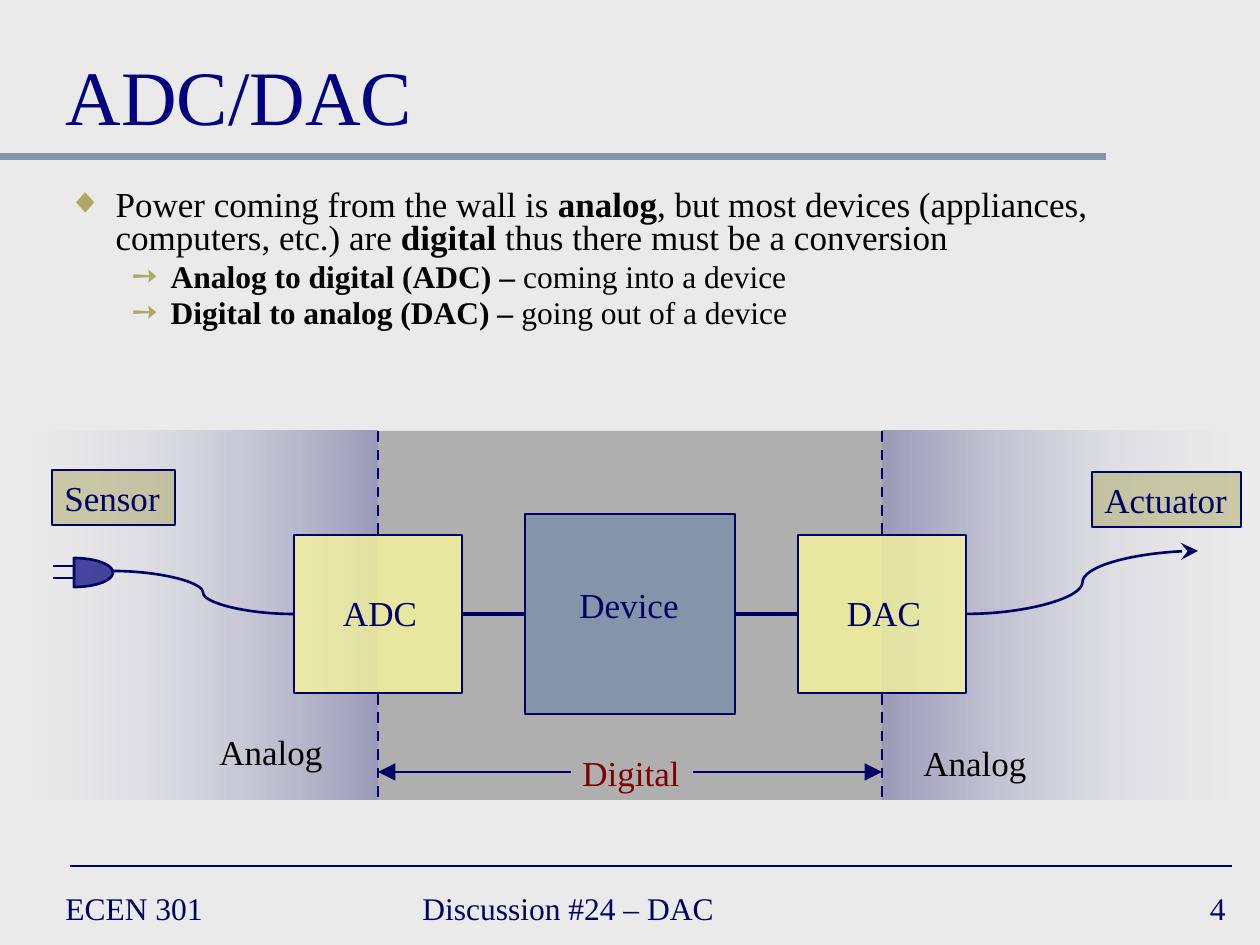
import math
from dataclasses import dataclass
from typing import Optional

from lxml import etree
from pptx import Presentation
from pptx.dml.color import RGBColor
from pptx.enum import dml, shapes, text
from pptx.oxml.ns import qn
from pptx.util import Pt

EMU_PER_PX = 914400 / 126
FONT = "Times New Roman"
BACKGROUND = RGBColor(0xEA, 0xEA, 0xEA)
NAVY = RGBColor(0x00, 0x00, 0x66)
TITLE_BLUE = RGBColor(0x00, 0x00, 0x80)
STEEL = RGBColor(0x84, 0x95, 0xA9)
VIOLET = RGBColor(0x66, 0x66, 0x99)
PALE_VIOLET = RGBColor(0xCB, 0xCB, 0xDD)
GRAY = RGBColor(0x96, 0x96, 0x96)
YELLOW = RGBColor(0xFF, 0xFF, 0x99)
OLIVE = RGBColor(0xAB, 0xA9, 0x64)
BULLET = RGBColor(0xAC, 0xA9, 0x64)
MAROON = RGBColor(0x80, 0x00, 0x00)
BLACK = RGBColor(0x00, 0x00, 0x00)
LEFT, CENTER, RIGHT = text.PP_ALIGN.LEFT, text.PP_ALIGN.CENTER, text.PP_ALIGN.RIGHT
STRAIGHT, CURVE = shapes.MSO_CONNECTOR.STRAIGHT, shapes.MSO_CONNECTOR.CURVE


@dataclass
class Box:
    left: int
    top: int
    width: int
    height: int


@dataclass
class Block:
    box: Box
    color: RGBColor
    opacity: int = 100
    line_width: float = 0
    label: str = ""


@dataclass
class Label:
    box: Box
    words: str
    color: RGBColor = NAVY
    size: int = 20
    align: text.PP_ALIGN = CENTER
    anchor: text.MSO_ANCHOR = text.MSO_ANCHOR.TOP


@dataclass
class Line:
    start: tuple[int, int]
    end: tuple[int, int]
    width: float = 1.5
    color: RGBColor = NAVY
    kind: shapes.MSO_CONNECTOR = STRAIGHT
    dashed: bool = False
    arrow: Optional[str] = None


@dataclass
class Bullet:
    mark: str
    size: int
    margin: int
    hanging: int
    runs: list[tuple[str, bool]]


def px(value: float) -> int:
    return round(value * EMU_PER_PX)


def bounds(box: Box) -> tuple[int, int, int, int]:
    return px(box.left), px(box.top), px(box.width), px(box.height)


def set_opacity(element, color: RGBColor, percent: int) -> None:
    for node in element.iter(qn("a:srgbClr")):
        if node.get("val") == str(color):
            etree.SubElement(node, qn("a:alpha")).set("val", str(percent * 1000))


def style_outline(shape, width: float) -> None:
    shape.shadow.inherit = False
    if width:
        shape.line.color.rgb = NAVY
        shape.line.width = Pt(width)
    else:
        shape.line.fill.background()


def fill_solid(shape, color: RGBColor, opacity: int) -> None:
    shape.fill.solid()
    shape.fill.fore_color.rgb = color
    if opacity < 100:
        set_opacity(shape._element.spPr.find(qn("a:solidFill")), color, opacity)


def style_font(paragraph, size: int, color: RGBColor) -> None:
    paragraph.font.name = FONT
    paragraph.font.size = Pt(size)
    paragraph.font.color.rgb = color


def write_label(shape, label: Label) -> None:
    frame = shape.text_frame
    frame.word_wrap = False
    frame.vertical_anchor = label.anchor
    paragraph = frame.paragraphs[0]
    paragraph.text = label.words
    paragraph.alignment = label.align
    style_font(paragraph, label.size, label.color)


def draw_label(slide, label: Label) -> None:
    write_label(slide.shapes.add_textbox(*bounds(label.box)), label)


def draw_block(slide, block: Block) -> None:
    shape = slide.shapes.add_shape(shapes.MSO_SHAPE.RECTANGLE, *bounds(block.box))
    fill_solid(shape, block.color, block.opacity)
    style_outline(shape, block.line_width)
    if block.label:
        write_label(shape, Label(block.box, block.label, align=LEFT))


def draw_fade(slide, box: Box, stops: list[tuple[RGBColor, int]]) -> None:
    shape = slide.shapes.add_shape(shapes.MSO_SHAPE.RECTANGLE, *bounds(box))
    shape.fill.gradient()
    shape.fill.gradient_angle = 0
    for stop, (color, opacity) in zip(shape.fill.gradient_stops, stops):
        stop.color.rgb = color
        set_opacity(shape._element.spPr, color, opacity)
    style_outline(shape, 0)


def draw_line(slide, line: Line) -> None:
    connector = slide.shapes.add_connector(line.kind, *map(px, line.start + line.end))
    connector.line.color.rgb = line.color
    connector.line.width = Pt(line.width)
    if line.dashed:
        connector.line.dash_style = dml.MSO_LINE.DASH
    properties = connector._element.spPr
    if line.arrow:
        arrowhead = etree.SubElement(properties.find(qn("a:ln")), qn("a:tailEnd"))
        for name, value in (("type", line.arrow), ("w", "lg"), ("len", "lg")):
            arrowhead.set(name, value)
    etree.SubElement(properties, qn("a:effectLst"))


def draw_plug(slide, box: Box) -> None:
    middle = box.top + box.height / 2
    angles = [math.radians(degrees) for degrees in range(-90, 91, 6)]
    points = [(px(box.left + box.width * math.cos(a)), px(middle + box.height / 2 * math.sin(a)))
              for a in angles]
    builder = slide.shapes.build_freeform(*points[0])
    builder.add_line_segments(points[1:], close=True)
    plug = builder.convert_to_shape()
    fill_solid(plug, TITLE_BLUE, 70)
    style_outline(plug, 1.5)


def place(shape, box: Box) -> None:
    shape.left, shape.top, shape.width, shape.height = bounds(box)
    shape.text_frame.auto_size = text.MSO_AUTO_SIZE.NONE


def write_bullet(paragraph, bullet: Bullet) -> None:
    properties = paragraph._p.get_or_add_pPr()
    properties.set("marL", str(px(bullet.margin)))
    properties.set("indent", str(-px(bullet.hanging)))
    color = etree.SubElement(properties, qn("a:buClr"))
    etree.SubElement(color, qn("a:srgbClr")).set("val", str(BULLET))
    etree.SubElement(properties, qn("a:buChar")).set("char", bullet.mark)
    paragraph.line_spacing = 0.8
    paragraph.alignment = LEFT
    style_font(paragraph, bullet.size, BLACK)
    for words, bold in bullet.runs:
        run = paragraph.add_run()
        run.text = words
        run.font.bold = bold


def main() -> None:
    presentation = Presentation()
    presentation.slide_width, presentation.slide_height = px(1260), px(945)
    slide = presentation.slides.add_slide(presentation.slide_layouts[1])
    slide.background.fill.solid()
    slide.background.fill.fore_color.rgb = BACKGROUND

    title, body = slide.placeholders
    place(title, Box(53, 21, 1155, 126))
    title.text_frame.vertical_anchor = text.MSO_ANCHOR.BOTTOM
    heading = title.text_frame.paragraphs[0]
    heading.text = "ADC/DAC"
    heading.alignment = LEFT
    style_font(heading, 44, TITLE_BLUE)

    place(body, Box(55, 184, 1152, 194))
    bullets = [
        Bullet("◆", 20, 48, 48, [
            ("Power coming from the wall is ", False), ("analog", True),
            (", but most devices (appliances, computers, etc.) are ", False),
            ("digital", True), (" thus there must be a conversion", False)]),
        Bullet("➙", 18, 103, 39, [
            ("Analog to digital (ADC) – ", True), ("coming into a device", False)]),
        Bullet("➙", 18, 103, 39, [
            ("Digital to analog (DAC) – ", True), ("going out of a device", False)]),
    ]
    frame = body.text_frame
    for index, bullet in enumerate(bullets):
        paragraph = frame.add_paragraph() if index else frame.paragraphs[0]
        paragraph.level = min(index, 1)
        write_bullet(paragraph, bullet)
    frame.paragraphs[0].space_before = Pt(0)

    middle = text.MSO_ANCHOR.MIDDLE
    for label in [
        Label(Box(53, 881, 273, 53), "ECEN 301", NAVY, 18, LEFT, middle),
        Label(Box(410, 881, 483, 53), "Discussion #24 – DAC", NAVY, 18, LEFT, middle),
        Label(Box(976, 881, 262, 53), "4", NAVY, 18, RIGHT, middle),
    ]:
        draw_label(slide, label)

    draw_fade(slide, Box(882, 431, 347, 369), [(VIOLET, 60), (PALE_VIOLET, 0)])
    draw_fade(slide, Box(32, 431, 346, 369), [(PALE_VIOLET, 0), (VIOLET, 60)])
    for block in [
        Block(Box(378, 431, 504, 369), GRAY, 70),
        Block(Box(525, 514, 210, 200), STEEL, 100, 1.5),
        Block(Box(294, 535, 168, 158), YELLOW, 70, 1.5),
        Block(Box(798, 535, 168, 158), YELLOW, 70, 1.5),
        Block(Box(1092, 472, 149, 55), OLIVE, 50, 1, "Actuator"),
        Block(Box(52, 470, 123, 55), OLIVE, 50, 1, "Sensor"),
    ]:
        draw_block(slide, block)

    for label in [
        Label(Box(564, 577, 130, 54), "Device"),
        Label(Box(325, 585, 110, 54), "ADC"),
        Label(Box(829, 585, 110, 54), "DAC"),
        Label(Box(566, 745, 130, 54), "Digital", MAROON),
        Label(Box(201, 724, 140, 54), "Analog", BLACK),
        Label(Box(905, 735, 140, 54), "Analog", BLACK),
    ]:
        draw_label(slide, label)

    borders = [Line((x, start), (x, end), dashed=True)
               for x in (378, 882) for start, end in ((694, 800), (534, 431))]
    prongs = [Line((73, y), (53, y)) for y in (566, 578)]
    for line in borders + prongs + [
        Line((0, 157), (1106, 157), 4, STEEL),
        Line((70, 866), (1232, 866), 1),
        Line((571, 772), (378, 772), arrow="triangle"),
        Line((693, 772), (882, 772), arrow="triangle"),
        Line((463, 614), (525, 614), 2.5),
        Line((735, 614), (797, 614), 2.5),
        Line((293, 614), (113, 571), kind=CURVE),
        Line((967, 614), (1198, 551), kind=CURVE, arrow="stealth"),
    ]:
        draw_line(slide, line)
    draw_plug(slide, Box(74, 558, 39, 29))

    presentation.save("out.pptx")


if __name__ == "__main__":
    main()
